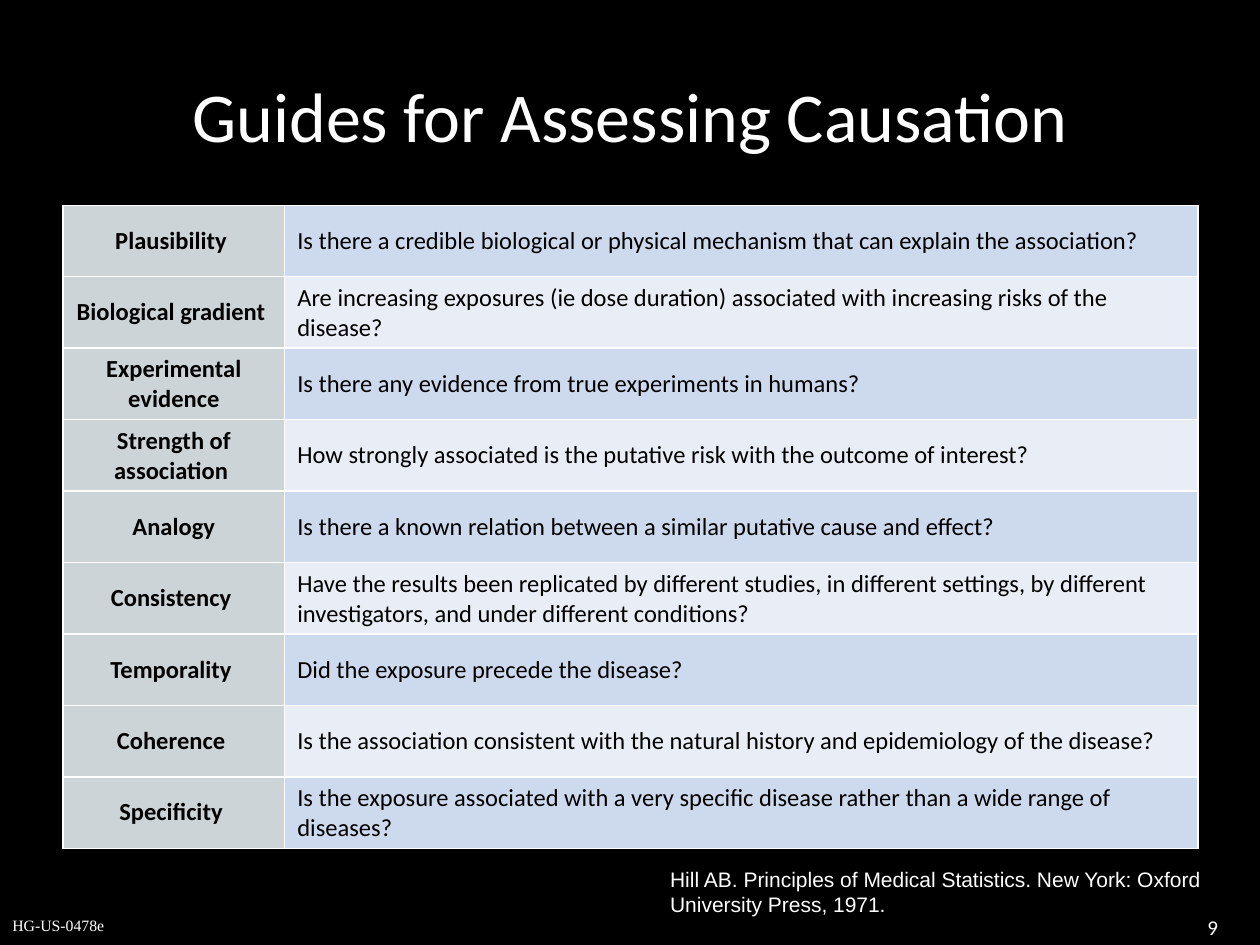
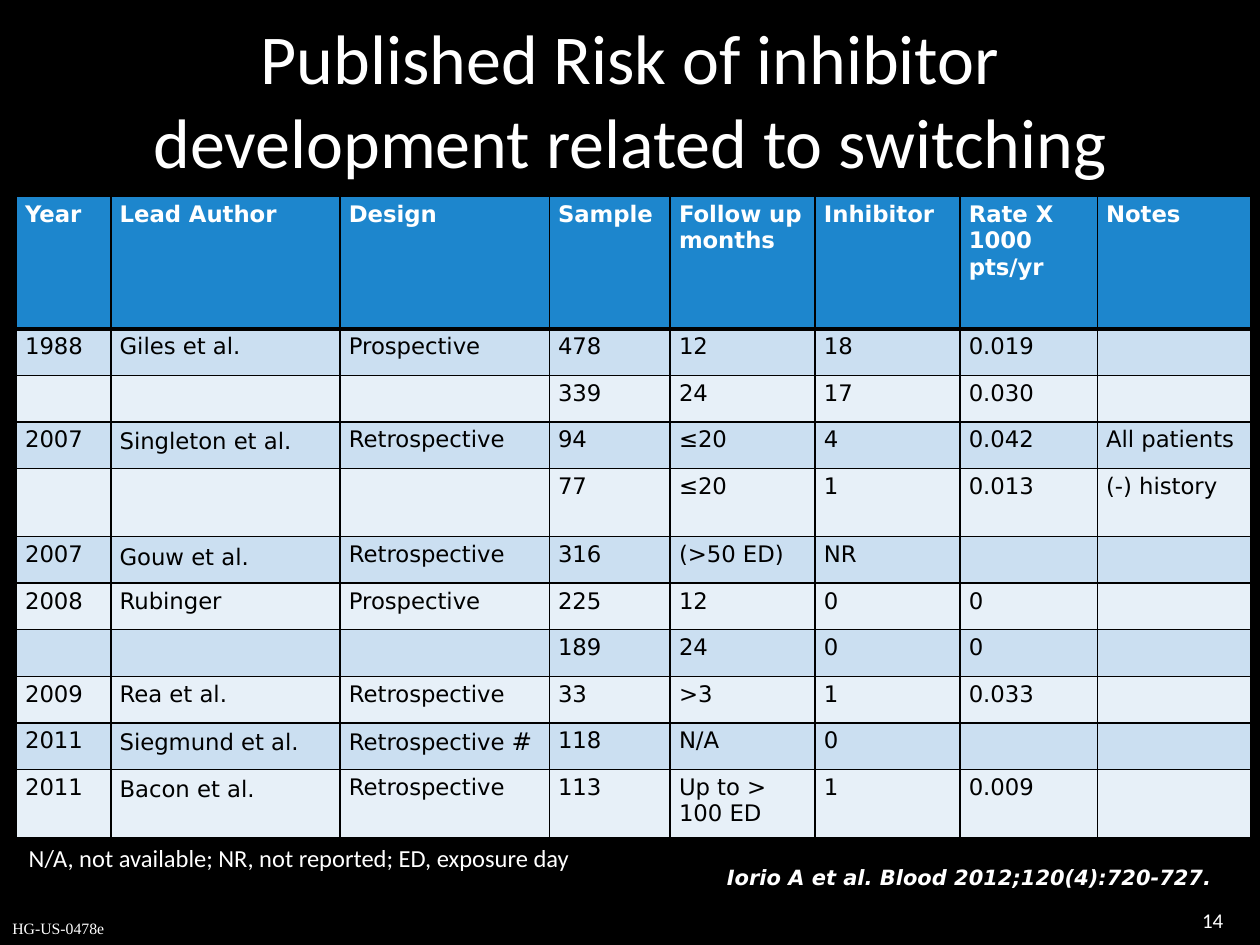
from dataclasses import dataclass
from typing import NamedTuple

from pptx import Presentation
from pptx.dml.color import RGBColor
from pptx.enum.text import MSO_ANCHOR as Anchor, MSO_AUTO_SIZE as AutoSize, PP_ALIGN as Align
from pptx.oxml.xmlchemy import OxmlElement
from pptx.util import Inches, Pt


@dataclass(frozen=True)
class Theme:
    background: str = "000000"
    light: str = "FFFFFF"
    dark: str = "000000"
    label_fill: str = "CDD4D7"
    guide_bands: tuple = ("CDD9ED", "E8EDF6")
    header_fill: str = "1D86CD"
    study_bands: tuple = ("CBDFF1", "E7F0F8")
    body_font: str = "Calibri"
    source_font: str = "Arial"
    study_font: str = "DejaVu Sans"
    code_font: str = "Times New Roman"
    title_size: int = 40
    body_size: int = 14
    study_size: int = 13
    small_size: int = 12
    code_size: int = 9


THEME = Theme()


class Area(NamedTuple):
    left: float
    top: float
    width: float
    height: float


class Span(NamedTuple):
    text: str
    size: int


class Guide(NamedTuple):
    name: str
    question: str


class Study(NamedTuple):
    year: str
    author: str | tuple
    design: str | tuple
    sample: str
    follow_up: str
    inhibitor: str
    rate: str = ""
    notes: str = ""


GUIDES = [
    Guide("Plausibility ", "Is there a credible biological or physical mechanism that can explain the association?"),
    Guide("Biological gradient ",
          "Are increasing exposures (ie dose duration) associated with increasing risks of the disease?"),
    Guide("Experimental evidence", "Is there any evidence from true experiments in humans?"),
    Guide("Strength of association ", "How strongly associated is the putative risk with the outcome of interest?"),
    Guide("Analogy", "Is there a known relation between a similar putative cause and effect?"),
    Guide("Consistency ",
          "Have the results been replicated by different studies, in different settings, "
          "by different investigators, and under different conditions?"),
    Guide("Temporality ", "Did the exposure precede the disease?"),
    Guide("Coherence ", "Is the association consistent with the natural history and epidemiology of the disease?"),
    Guide("Specificity ",
          "Is the exposure associated with a very specific disease rather than a wide range of diseases?"),
]

SPACE = Span(" ", 14)
STUDIES = [
    Study("Year", "Lead Author", "Design", "Sample", "Follow up months", "Inhibitor", "Rate X 1000 pts/yr", "Notes"),
    Study("1988", "Giles et al.", "Prospective", "478", "12", "18", "0.019"),
    Study("", "", "", "339", "24", "17", "0.030"),
    Study("2007", ("Singleton et al.", SPACE), "Retrospective", "94", "≤20", "4", "0.042", "All patients"),
    Study("", "", "", "77", "≤20", "1", "0.013", "(-) history"),
    Study("2007", ("Gouw et al.", Span(" ", 15)), "Retrospective", "316", "(>50 ED)", "NR"),
    Study("2008", "Rubinger", "Prospective", "225", "12", "0", "0"),
    Study("", "", "", "189", "24", "0", "0"),
    Study("2009", "Rea et al.", "Retrospective", "33", ">3", "1", "0.033"),
    Study("2011", ("Siegmund et al.", SPACE), ("Retrospective ", Span("#", 14)), "118", "N/A", "0"),
    Study("2011", ("Bacon et al.", SPACE), "Retrospective", "113", "Up to > 100 ED", "1", "0.009"),
]


def write(frame, text: str | tuple, *, size: int = THEME.body_size, font: str = THEME.body_font,
          color: str = THEME.light, bold: bool = False, italic: bool = False,
          align: Align = Align.LEFT) -> None:
    para = frame.paragraphs[0]
    para.alignment = align
    if not text:
        end = OxmlElement("a:endParaRPr")
        end.set("sz", str(size * 100))
        para._p.append(end)
        return
    for part in (text,) if isinstance(text, str) else text:
        content, part_size = part if isinstance(part, Span) else (part, size)
        span = para.add_run()
        span.text = content
        span.font.size = Pt(part_size)
        span.font.name = font
        span.font.bold = bold
        span.font.italic = italic
        span.font.color.rgb = RGBColor.from_string(color)


def add_text(page, area: Area, text: str, *, anchor: Anchor = Anchor.TOP, wrap: bool = True,
             grow: bool = False, **style) -> None:
    box = page.shapes.add_textbox(*map(Inches, area))
    frame = box.text_frame
    frame.word_wrap = wrap
    frame.auto_size = AutoSize.SHAPE_TO_FIT_TEXT if grow else AutoSize.NONE
    frame.vertical_anchor = anchor
    write(frame, text, **style)


def add_page(deck, title: str, title_top: float, number: str, number_top: float, code_top: float):
    page = deck.slides.add_slide(deck.slide_layouts[6])
    page.background.fill.solid()
    page.background.fill.fore_color.rgb = RGBColor.from_string(THEME.background)
    add_text(page, Area(0.75, title_top, 8.5, 1.56), title, anchor=Anchor.MIDDLE,
             size=THEME.title_size, align=Align.CENTER)
    add_text(page, Area(9.25, number_top, 0.75, 0.4), number, anchor=Anchor.MIDDLE,
             size=THEME.small_size, align=Align.CENTER)
    add_text(page, Area(0, code_top, 0.94, 0.25), "HG-US-0478e", wrap=False, grow=True,
             size=THEME.code_size, font=THEME.code_font)
    return page


def add_grid(page, left: float, top: float, widths: list[float], heights: list[float]):
    area = Area(left, top, sum(widths), sum(heights))
    table = page.shapes.add_table(len(heights), len(widths), *map(Inches, area)).table
    table.first_row = False
    table.horz_banding = False
    for column, width in zip(table.columns, widths):
        column.width = Inches(width)
    for row, height in zip(table.rows, heights):
        row.height = Inches(height)
    return table


def format_cell(cell, fill: str, border: str, *, top: int = 1, bottom: int = 1) -> None:
    for side, width in (("L", 1), ("R", 1), ("T", top), ("B", bottom)):
        line = OxmlElement(f"a:ln{side}")
        line.set("w", str(Pt(width)))
        solid = OxmlElement("a:solidFill")
        color = OxmlElement("a:srgbClr")
        color.set("val", border)
        solid.append(color)
        line.append(solid)
        cell._tc.get_or_add_tcPr().append(line)
    cell.fill.solid()
    cell.fill.fore_color.rgb = RGBColor.from_string(fill)


def build_guides(deck) -> None:
    page = add_page(deck, "Guides for Assessing Causation", 0.13, "9", 7.16, 7.22)
    table = add_grid(page, 0.5, 1.63, [1.76, 7.25], [5.1 / len(GUIDES)] * len(GUIDES))
    for row, guide in enumerate(GUIDES):
        label, question = table.cell(row, 0), table.cell(row, 1)
        format_cell(label, THEME.label_fill, THEME.light)
        format_cell(question, THEME.guide_bands[row % 2], THEME.light)
        label.vertical_anchor = question.vertical_anchor = Anchor.MIDDLE
        write(label.text_frame, guide.name, color=THEME.dark, bold=True, align=Align.CENTER)
        write(question.text_frame, guide.question, color=THEME.dark)
    add_text(page, Area(5.22, 6.83, 4.52, 0.5),
             "Hill AB. Principles of Medical Statistics. New York: Oxford University Press, 1971.",
             grow=True, size=THEME.small_size, font=THEME.source_font)


def build_studies(deck) -> None:
    page = add_page(deck, "Published Risk of inhibitor development related to switching", 0, "14", 7.1, 7.24)
    tall_rows = {0: 1.05, 4: 0.54, 10: 0.54}
    heights = [tall_rows.get(row, 0.37) for row in range(len(STUDIES))]
    table = add_grid(page, 0.13, 1.56, [0.75, 1.82, 1.66, 0.96, 1.15, 1.15, 1.09, 1.22], heights)
    table.first_row = True
    for row, study in enumerate(STUDIES):
        header = row == 0
        fill = THEME.header_fill if header else THEME.study_bands[(row - 1) % 2]
        for column, text in enumerate(study):
            cell = table.cell(row, column)
            format_cell(cell, fill, THEME.dark, top=3 if row == 1 else 1, bottom=3 if header else 1)
            cell.margin_left = cell.margin_right = Inches(0.07)
            cell.margin_top = cell.margin_bottom = Inches(0.04)
            write(cell.text_frame, text, size=THEME.study_size, font=THEME.study_font,
                  color=THEME.light if header else THEME.dark, bold=header)
    add_text(page, Area(5.67, 6.81, 4.31, 0.28), "Iorio A et al. Blood 2012;120(4):720-727.",
             grow=True, size=THEME.small_size, font=THEME.study_font, bold=True, italic=True)
    add_text(page, Area(0.13, 6.64, 4.96, 0.34), "N/A, not available; NR, not reported; ED, exposure day",
             wrap=False, grow=True)


def main() -> None:
    deck = Presentation()
    deck.slide_width = Inches(10)
    deck.slide_height = Inches(7.5)
    build_guides(deck)
    build_studies(deck)
    deck.save("out.pptx")


if __name__ == "__main__":
    main()
